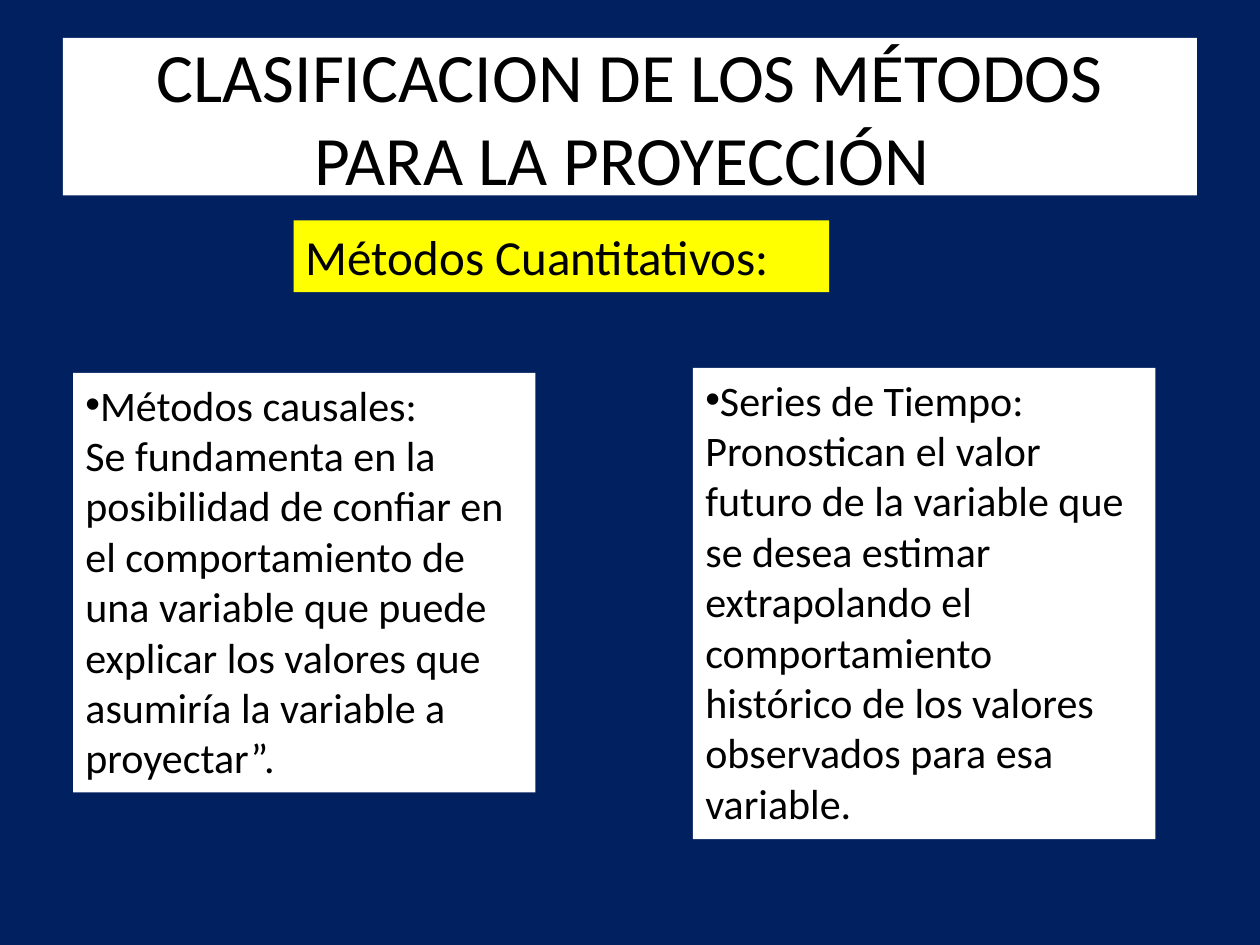
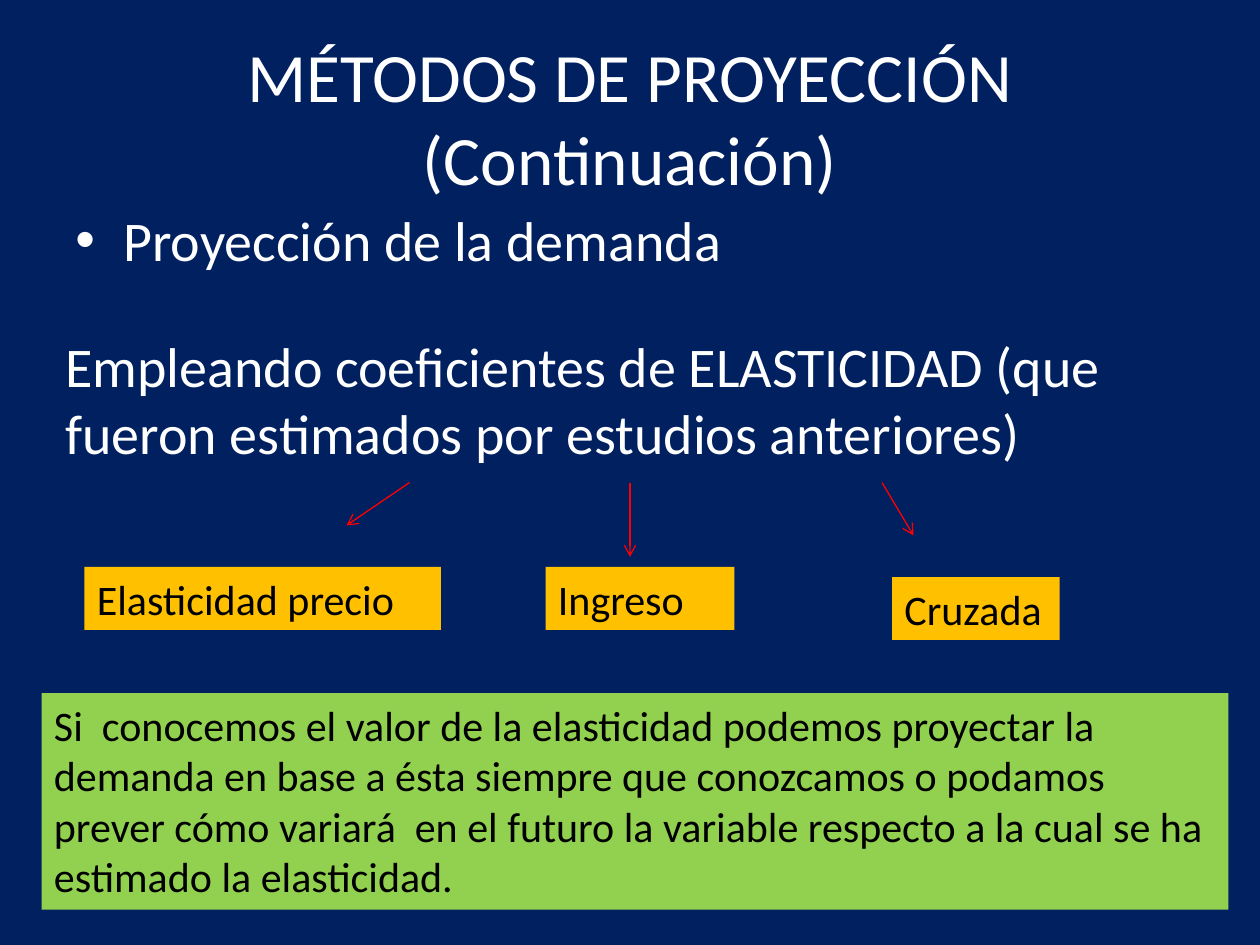
from lxml import etree
from pptx import Presentation
from pptx.dml.color import RGBColor
from pptx.enum.shapes import MSO_CONNECTOR
from pptx.enum.text import MSO_ANCHOR, PP_ALIGN
from pptx.oxml.ns import qn
from pptx.util import Inches, Pt

STRAIGHT = MSO_CONNECTOR.STRAIGHT
TOP, MIDDLE = MSO_ANCHOR.TOP, MSO_ANCHOR.MIDDLE
LEFT, CENTER = PP_ALIGN.LEFT, PP_ALIGN.CENTER

COLORS = {
    "navy": "002060",
    "white": "FFFFFF",
    "black": "000000",
    "yellow": "FFFF00",
    "amber": "FFC000",
    "green": "92D050",
    "red": "FF0000",
}
FONT = "Calibri"
TITLE = dict(at=(0.5, 0.3, 9, 1.25), size=39.6, align=CENTER, anchor=MIDDLE)


def add_text(page, *lines, at, size=24, color="black", fill=None, align=LEFT,
             anchor=TOP, bullet=False, hang=0, before=0):
    """Add a text box with one paragraph per line; bullet marks the first one."""
    box = page.shapes.add_textbox(*map(Inches, at))
    if fill:
        box.fill.solid()
        box.fill.fore_color.rgb = RGBColor.from_string(COLORS[fill])
    frame = box.text_frame
    frame.word_wrap = True
    frame.vertical_anchor = anchor
    for index, line in enumerate(lines):
        para = frame.paragraphs[0] if index == 0 else frame.add_paragraph()
        para.alignment = align
        para.space_before = Pt(before)
        if bullet and index == 0:
            props = para._p.get_or_add_pPr()
            props.set("marL", str(Inches(hang)))
            props.set("indent", str(-Inches(hang)))
            etree.SubElement(props, qn("a:buFont"), typeface="Arial")
            etree.SubElement(props, qn("a:buChar"), char="•")
        span = para.add_run()
        span.text = line
        span.font.name = FONT
        span.font.size = Pt(size)
        span.font.color.rgb = RGBColor.from_string(COLORS[color])


def add_arrow(page, start, end):
    arrow = page.shapes.add_connector(STRAIGHT, *map(Inches, start + end))
    arrow.line.color.rgb = RGBColor.from_string(COLORS["red"])
    arrow.line.width = Pt(0.75)
    etree.SubElement(arrow.line._get_or_add_ln(), qn("a:tailEnd"), type="arrow")
    etree.SubElement(arrow._element.spPr, qn("a:effectLst"))


deck = Presentation()
deck.slide_width, deck.slide_height = Inches(10), Inches(7.5)
methods_page, elasticity_page = pages = [
    deck.slides.add_slide(deck.slide_layouts[6]) for _ in range(2)
]
for page in pages:
    page.background.fill.solid()
    page.background.fill.fore_color.rgb = RGBColor.from_string(COLORS["navy"])

# Quantitative methods
add_text(methods_page, "CLASIFICACION DE LOS MÉTODOS PARA LA PROYECCIÓN ",
         fill="white", **TITLE)
add_text(methods_page, "Métodos Cuantitativos:",
         at=(2.33, 1.75, 4.25, 0.57), size=28, fill="yellow")
method_cards = [
    ((0.58, 2.96, 3.67, 3.33), "Métodos causales:",
     "Se fundamenta en la posibilidad de confiar en el comportamiento de una "
     "variable que puede explicar los valores que asumiría la variable a "
     "proyectar”."),
    ((5.5, 2.92, 3.67, 3.74), "Series de Tiempo:",
     "Pronostican el valor futuro de la variable que se desea estimar "
     "extrapolando el comportamiento histórico de los valores observados para "
     "esa variable."),
]
for place, heading, description in method_cards:
    add_text(methods_page, heading, description, at=place, fill="white", bullet=True)

# Elasticity coefficients
add_text(elasticity_page, "MÉTODOS DE PROYECCIÓN (Continuación)",
         color="white", **TITLE)
add_text(elasticity_page, "Proyección de la demanda", at=(0.5, 1.58, 9, 0.75),
         size=32, color="white", bullet=True, hang=0.38, before=6.4)
add_text(elasticity_page,
         "Empleando coeficientes de ELASTICIDAD (que fueron estimados por "
         "estudios anteriores)",
         at=(0.42, 2.58, 9.33, 1.18), size=32, color="white")
elasticities = [
    ("Elasticidad precio", (0.67, 4.5, 2.83, 0.5), (3.25, 3.83), (2.75, 4.17)),
    ("Ingreso", (4.33, 4.5, 1.5, 0.5), (5, 3.83), (5, 4.42)),
    ("Cruzada", (7.08, 4.58, 1.33, 0.5), (7, 3.83), (7.25, 4.25)),
]
for name, place, start, end in elasticities:
    add_arrow(elasticity_page, start, end)
    add_text(elasticity_page, name, at=place, fill="amber")
add_text(elasticity_page,
         "Si  conocemos el valor de la elasticidad podemos proyectar la demanda "
         "en base a ésta siempre que conozcamos o podamos prever cómo variará  en "
         "el futuro la variable respecto a la cual se ha estimado la elasticidad.",
         at=(0.33, 5.5, 9.42, 1.72), fill="green")

deck.save("out.pptx")
